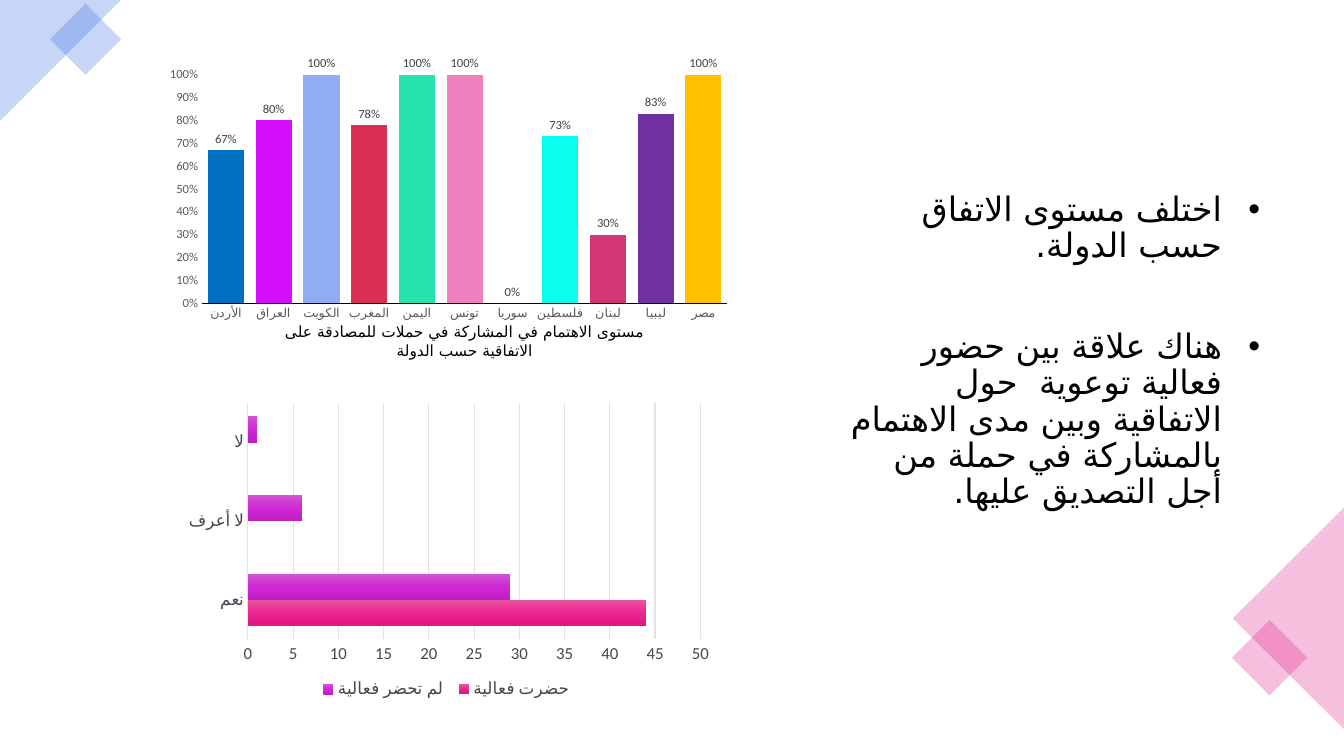
import pptx
import pptx.chart.data
import pptx.dml.color
import pptx.enum.chart
import pptx.enum.shapes
import pptx.enum.text
import pptx.oxml.ns
import pptx.util
from lxml import etree

SLIDE_WIDTH, SLIDE_HEIGHT = pptx.util.Inches(13.333), pptx.util.Inches(7.5)
FONT, ARABIC_FONT = "Calibri", "DejaVu Sans"
BLUE, PINK = "4775E7", "E32D91"
TRIANGLE = pptx.enum.shapes.MSO_SHAPE.ISOSCELES_TRIANGLE
RECTANGLE = pptx.enum.shapes.MSO_SHAPE.RECTANGLE
CENTER, RIGHT = pptx.enum.text.PP_ALIGN.CENTER, pptx.enum.text.PP_ALIGN.RIGHT

FINDINGS = [
    "اختلف مستوى الاتفاق حسب الدولة.",
    "هناك علاقة بين حضور فعالية توعوية  حول الاتفاقية وبين مدى الاهتمام "
    "بالمشاركة في حملة من أجل التصديق عليها.",
]
CAPTION = "مستوى الاهتمام في المشاركة في حملات للمصادقة على الاتفاقية حسب الدولة"
COUNTRIES = [
    ("الأردن", 0.67, "0070C0"), ("العراق", 0.8, "D40CFC"),
    ("الكويت", 1, "91ACF1"), ("المغرب", 0.78, "DA2E57"),
    ("اليمن", 1, "25E3AD"), ("تونس", 1, "EE81BD"),
    ("سوريا", 0, PINK), ("فلسطين", 0.73, "0AFEED"),
    ("لبنان", 0.3, "D23675"), ("ليبيا", 0.83, "7030A0"),
    ("مصر", 1, "FFC000"),
]
ANSWERS = ["نعم", "لا أعرف", "لا"]
ATTENDANCE = [
    ("حضرت فعالية ", (44, 0, 0), ("E8559D", "EC2492", "DC1683")),
    ("لم تحضر فعالية ", (29, 6, 1), ("D055D4", "CF28D4", "BF1DC3")),
]


def area(left, top, width, height):
    """Turn percentages of the slide's size into lengths."""
    return (int(SLIDE_WIDTH * left / 100), int(SLIDE_HEIGHT * top / 100),
            int(SLIDE_WIDTH * width / 100), int(SLIDE_HEIGHT * height / 100))


def rgb(color):
    return pptx.dml.color.RGBColor.from_string(color)


def set_fill(fill, color, opacity=100):
    fill.solid()
    fill.fore_color.rgb = rgb(color)
    if opacity < 100:
        tint = fill._xPr.find(".//" + pptx.oxml.ns.qn("a:srgbClr"))
        etree.SubElement(tint, pptx.oxml.ns.qn("a:alpha"), val=str(opacity * 1000))


def set_gradient(fill, colors):
    """Spread the colours evenly from top to bottom."""
    fill.gradient()
    fill.gradient_angle = 270
    stops = fill._xPr.find(".//" + pptx.oxml.ns.qn("a:gsLst"))
    for stop in list(stops):
        stops.remove(stop)
    for index, color in enumerate(colors):
        position = index * 100000 // (len(colors) - 1)
        stop = etree.SubElement(stops, pptx.oxml.ns.qn("a:gs"), pos=str(position))
        etree.SubElement(stop, pptx.oxml.ns.qn("a:srgbClr"), val=color)


def set_font(font, size, color):
    font.name, font.size = FONT, pptx.util.Pt(size)
    font.color.rgb = rgb(color)


def write(paragraph, text, size, color="000000", align=CENTER, rtl=False,
          line_spacing=None, space_before=None):
    paragraph.alignment = align
    if rtl:
        paragraph._p.get_or_add_pPr().set("rtl", "1")
    if line_spacing:
        paragraph.line_spacing = line_spacing
    if space_before is not None:
        paragraph.space_before = pptx.util.Pt(space_before)
    run = paragraph.add_run()
    run.text = text
    set_font(run.font, size, color)
    etree.SubElement(run.font._element, pptx.oxml.ns.qn("a:cs"), typeface=ARABIC_FONT)


def add_block(shapes, preset, place, color, opacity=100, rotation=0, apex=None):
    block = shapes.add_shape(preset, *area(*place))
    block.shadow.inherit = False
    block.line.fill.background()
    block.rotation = rotation
    set_fill(block.fill, color, opacity)
    if apex is not None:
        block.adjustments[0] = apex
    return block


def add_corner(slide, color, triangle, turn, apex, diamond):
    corner = slide.shapes.add_group_shape().shapes
    add_block(corner, TRIANGLE, triangle, color, 30, turn, apex)
    add_block(corner, RECTANGLE, diamond, color, 30, 45)


def add_findings(slide, place):
    body = slide.placeholders[1]
    body.left, body.top, body.width, body.height = area(*place)
    frame = body.text_frame
    frame.word_wrap = True
    frame.auto_size = pptx.enum.text.MSO_AUTO_SIZE.NONE
    frame.vertical_anchor = pptx.enum.text.MSO_ANCHOR.TOP
    for index, finding in enumerate(FINDINGS):
        paragraph = frame.add_paragraph() if index else frame.paragraphs[0]
        write(paragraph, finding, 24, align=RIGHT, rtl=True, line_spacing=0.9,
              space_before=46 if index else 10)


def add_caption(slide, place):
    caption = add_block(slide.shapes, RECTANGLE, place, "FFFFFF")
    frame = caption.text_frame
    frame.word_wrap = True
    frame.vertical_anchor = pptx.enum.text.MSO_ANCHOR.MIDDLE
    write(frame.paragraphs[0], CAPTION, 11)


def style_axis(axis, size, color, line=None):
    axis.major_tick_mark = axis.minor_tick_mark = pptx.enum.chart.XL_TICK_MARK.NONE
    set_font(axis.tick_labels.font, size, color)
    axis.has_major_gridlines = False
    if line:
        axis.format.line.color.rgb = rgb(line)
        axis.format.line.width = pptx.util.Pt(0.75)
    else:
        axis.format.line.fill.background()


def add_chart(slide, kind, place, categories, series, size, color, axis_line,
              top, step, gap, overlap=0, number_format="General"):
    data = pptx.chart.data.CategoryChartData(number_format=number_format)
    data.categories = categories
    for name, values in series:
        data.add_series(name, values)
    chart = slide.shapes.add_chart(kind, *area(*place), data).chart
    chart.has_title = chart.has_legend = False
    set_font(chart.font, 10, "000000")
    style_axis(chart.category_axis, size, color, axis_line)
    scale = chart.value_axis
    style_axis(scale, size, color)
    scale.minimum_scale, scale.maximum_scale, scale.major_unit = 0, top, step
    scale.tick_labels.number_format = number_format
    scale.tick_labels.number_format_is_linked = False
    plot = chart.plots[0]
    plot.gap_width, plot.overlap, plot.vary_by_categories = gap, overlap, False
    return chart


def add_country_chart(slide, place):
    names, shares, colors = zip(*COUNTRIES)
    chart = add_chart(slide, pptx.enum.chart.XL_CHART_TYPE.COLUMN_CLUSTERED, place,
                      names, [("Series 1", shares)], 9, "595959", "000000",
                      top=1, step=0.1, gap=32, overlap=-27, number_format="0%")
    interest = chart.plots[0].series[0]
    set_fill(interest.format.fill, PINK)
    for index, color in enumerate(colors):
        if color != PINK:
            set_fill(interest.points[index].format.fill, color)
    labels = interest.data_labels
    labels.show_value = True
    labels.position = pptx.enum.chart.XL_LABEL_POSITION.OUTSIDE_END
    labels.number_format, labels.number_format_is_linked = "0%", False
    set_font(labels.font, 9, "404040")


def add_attendance_chart(slide, place):
    chart = add_chart(slide, pptx.enum.chart.XL_CHART_TYPE.BAR_CLUSTERED, place,
                      ANSWERS, [group[:2] for group in ATTENDANCE], 12, "454551",
                      "E2E2E6", top=50, step=5, gap=100)
    grid = chart.value_axis.major_gridlines.format.line
    grid.color.rgb, grid.width = rgb("E2E2E6"), pptx.util.Pt(0.75)
    for bars, (_, _, colors) in zip(chart.plots[0].series, ATTENDANCE):
        set_gradient(bars.format.fill, colors)
    chart.has_legend = True
    chart.legend.position = pptx.enum.chart.XL_LEGEND_POSITION.BOTTOM
    chart.legend.include_in_layout = False
    set_font(chart.legend.font, 12, "454551")


def main():
    deck = pptx.Presentation()
    deck.slide_width, deck.slide_height = SLIDE_WIDTH, SLIDE_HEIGHT
    slide = deck.slides.add_slide(deck.slide_layouts[1])
    title = slide.shapes.title._element
    title.getparent().remove(title)

    add_corner(slide, BLUE, (0, 0, 9, 16), 180, 1, (4.5, 1.87, 3.75, 6.67))
    add_corner(slide, PINK, (87.6, 74.4, 16.57, 14.8), 270, 0.5,
               (92.48, 83.47, 3.97, 7.07))
    add_findings(slide, (62.25, 24.8, 32.25, 55.6))
    add_country_chart(slide, (11.78, 7.47, 43.2, 35.47))
    add_attendance_chart(slide, (13.2, 52.53, 40.35, 40.27))
    add_caption(slide, (18.45, 42.67, 32.25, 4.8))
    deck.save("out.pptx")


if __name__ == "__main__":
    main()
